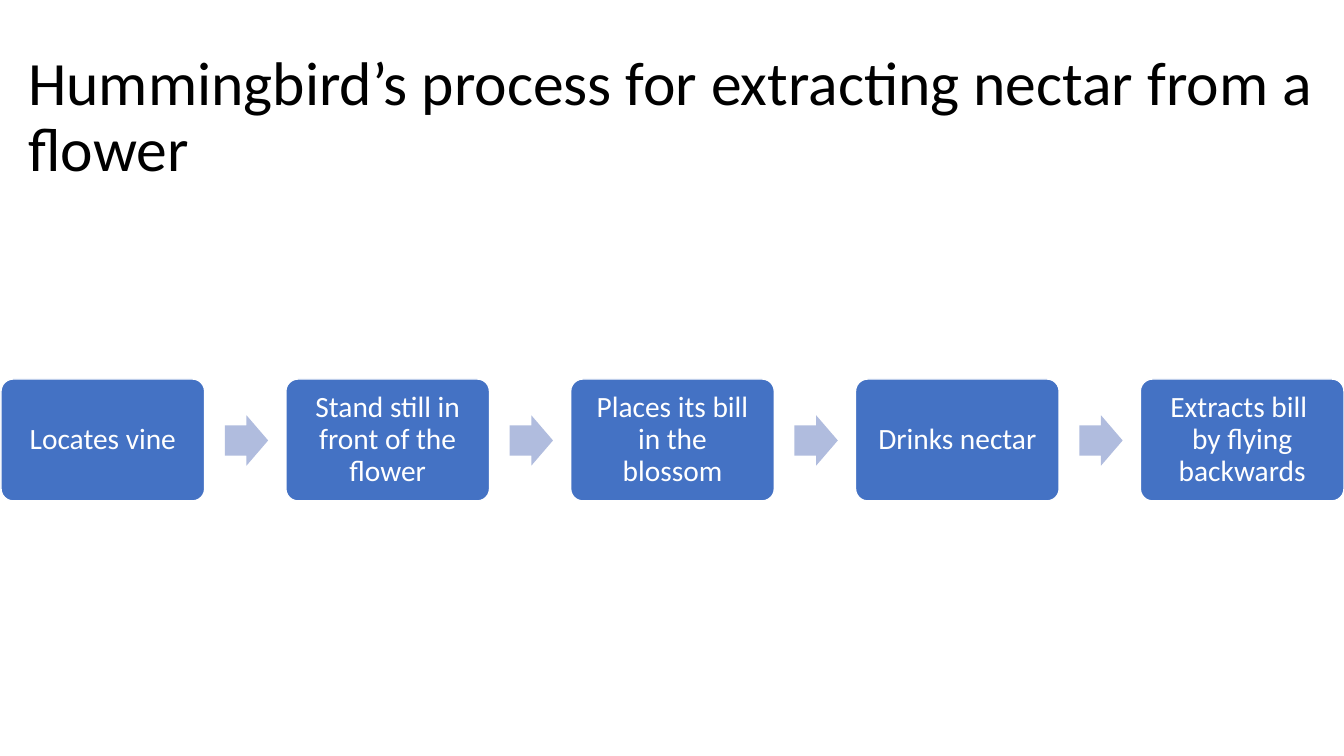
from dataclasses import dataclass

from pptx import Presentation
from pptx.dml.color import RGBColor
from pptx.enum.shapes import MSO_SHAPE
from pptx.enum.text import MSO_ANCHOR, MSO_AUTO_SIZE, PP_ALIGN
from pptx.shapes.autoshape import Shape
from pptx.slide import Slide
from pptx.util import Inches, Pt

ROUNDED = MSO_SHAPE.ROUNDED_RECTANGLE
ARROW = MSO_SHAPE.RIGHT_ARROW
MIDDLE = MSO_ANCHOR.MIDDLE
LEFT, CENTER = PP_ALIGN.LEFT, PP_ALIGN.CENTER
NO_AUTOFIT = MSO_AUTO_SIZE.NONE

FONT = "Calibri"
BLACK, WHITE = "000000", "FFFFFF"
STEP_BLUE, ARROW_BLUE = "4472C4", "B0BCDE"

TITLE = "Hummingbird’s process for extracting nectar from a flower"
STEPS = (
    "Locates vine",
    "Stand still in front of the flower",
    "Places its bill in the blossom",
    "Drinks nectar",
    "Extracts bill  by flying backwards",
)
FIRST_LEFT, LAST_LEFT = 0.01, 11.31
STEP_PITCH = (LAST_LEFT - FIRST_LEFT) / (len(STEPS) - 1)
ARROW_OFFSET = 2.22
TEXT_INSET = Inches(0.13)


@dataclass(frozen=True)
class Area:
    left: float
    top: float
    width: float
    height: float


def color(value: str) -> RGBColor:
    return RGBColor.from_string(value)


def write_text(shape: Shape, text: str, size: float, ink: str, align: PP_ALIGN) -> None:
    frame = shape.text_frame
    frame.text = text
    frame.word_wrap = True
    frame.auto_size = NO_AUTOFIT
    frame.vertical_anchor = MIDDLE
    para = frame.paragraphs[0]
    para.alignment = align
    para.line_spacing = 0.9
    para.font.name = FONT
    para.font.size = Pt(size)
    para.font.color.rgb = color(ink)


def add_block(page: Slide, kind: MSO_SHAPE, area: Area, fill: str) -> Shape:
    block = page.shapes.add_shape(
        kind, Inches(area.left), Inches(area.top), Inches(area.width), Inches(area.height)
    )
    block.shadow.inherit = False
    block.fill.solid()
    block.fill.fore_color.rgb = color(fill)
    return block


def add_step(page: Slide, left: float, text: str) -> None:
    box = add_block(page, ROUNDED, Area(left, 3.76, 2.02, 1.21), STEP_BLUE)
    box.adjustments[0] = 0.1
    box.line.color.rgb = color(WHITE)
    box.line.width = Pt(1)
    frame = box.text_frame
    frame.margin_left = frame.margin_right = TEXT_INSET
    frame.margin_top = frame.margin_bottom = TEXT_INSET
    write_text(box, text, 21, WHITE, CENTER)


def add_arrow(page: Slide, left: float) -> None:
    arrow = add_block(page, ARROW, Area(left, 4.12, 0.43, 0.5), ARROW_BLUE)
    arrow.adjustments[0] = 0.6
    arrow.adjustments[1] = 0.5
    arrow.line.fill.background()


def add_title(page: Slide) -> None:
    title = page.shapes.title
    title.left, title.top = Inches(0.18), Inches(0.45)
    title.width, title.height = Inches(12.97), Inches(1.45)
    write_text(title, TITLE, 44, BLACK, LEFT)


def main() -> None:
    deck = Presentation()
    deck.slide_width, deck.slide_height = Inches(13.33), Inches(7.5)
    page = deck.slides.add_slide(deck.slide_layouts.get_by_name("Title Only"))
    add_title(page)
    for index, text in enumerate(STEPS):
        left = FIRST_LEFT + index * STEP_PITCH
        add_step(page, left, text)
        if index < len(STEPS) - 1:
            add_arrow(page, left + ARROW_OFFSET)
    deck.save("out.pptx")


if __name__ == "__main__":
    main()
